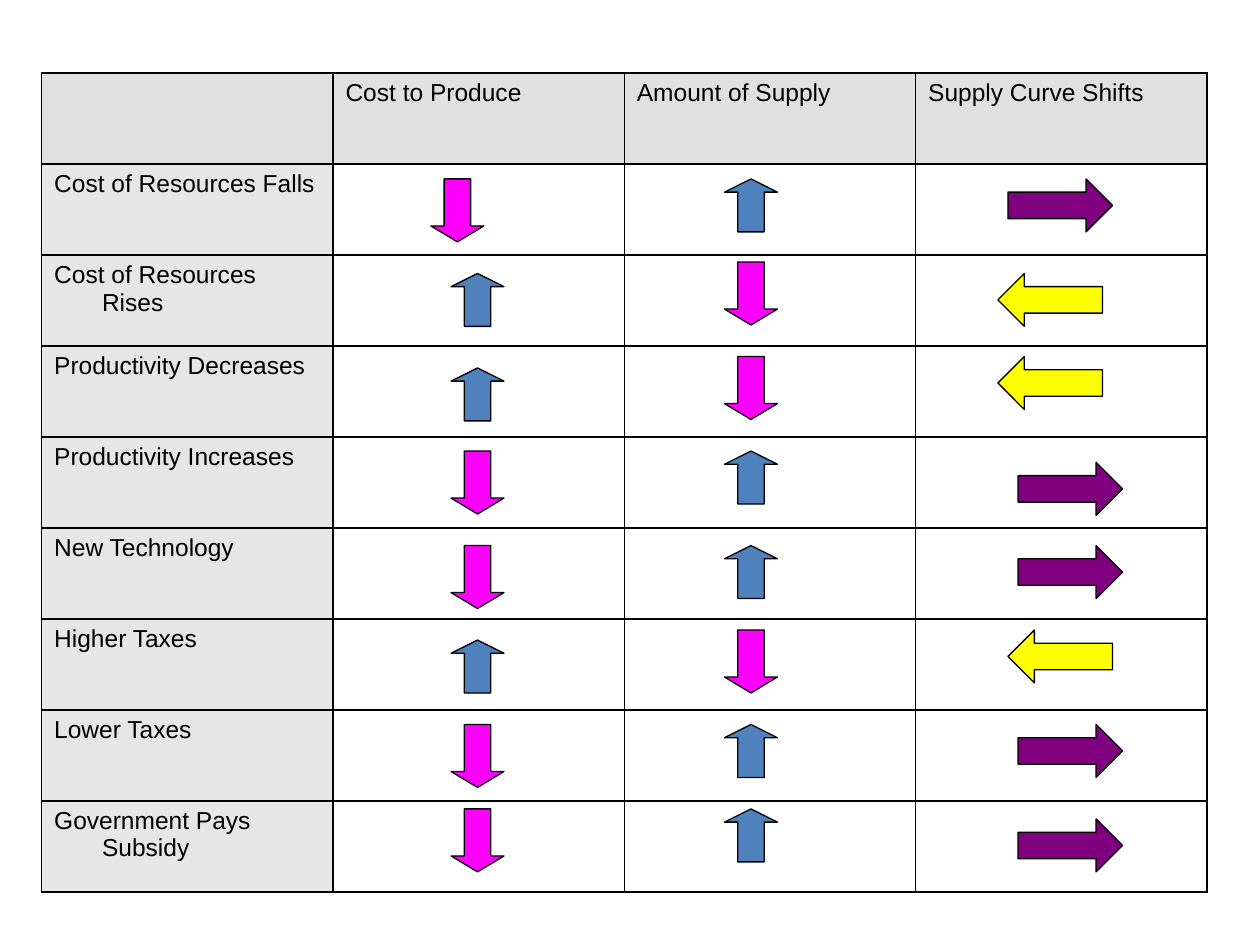
from dataclasses import dataclass

from lxml.etree import SubElement
from pptx import Presentation
from pptx.dml.color import RGBColor
from pptx.enum.shapes import MSO_SHAPE
from pptx.oxml.ns import qn
from pptx.util import Inches, Pt


@dataclass(frozen=True)
class Theme:
    """Colours, type and line sizes of the slide."""

    font: str = "Arial"
    text_size: float = 14
    ink: str = "000000"
    header_fill: str = "E0E0E0"
    label_fill: str = "E6E6E6"
    up_fill: str = "4F81BD"
    down_fill: str = "FF00FF"
    right_fill: str = "800080"
    left_fill: str = "FFFF00"
    border_width: float = 1
    outline_width: float = 0.75
    hanging_indent: float = 0.38


THEME = Theme()

ARROWS = {
    "up": (MSO_SHAPE.UP_ARROW, 0.42, 0.42, 0.25, THEME.up_fill),
    "down": (MSO_SHAPE.DOWN_ARROW, 0.42, 0.5, 0.3, THEME.down_fill),
    "right": (MSO_SHAPE.RIGHT_ARROW, 0.83, 0.42, 0.5, THEME.right_fill),
    "left": (MSO_SHAPE.LEFT_ARROW, 0.83, 0.42, 0.5, THEME.left_fill),
}

HEADERS = ("", "Cost to Produce", "Amount of Supply", "Supply Curve Shifts")

EFFECTS = (
    ("Cost of Resources Falls",
     ("down", 3.42, 1.42), ("up", 5.75, 1.42), ("right", 8, 1.42)),
    ("Cost of Resources Rises",
     ("up", 3.58, 2.17), ("down", 5.75, 2.08), ("left", 7.92, 2.17)),
    ("Productivity Decreases",
     ("up", 3.58, 2.92), ("down", 5.75, 2.83), ("left", 7.92, 2.83)),
    ("Productivity Increases",
     ("down", 3.58, 3.58), ("up", 5.75, 3.58), ("right", 8.08, 3.67)),
    ("New Technology",
     ("down", 3.58, 4.33), ("up", 5.75, 4.33), ("right", 8.08, 4.33)),
    ("Higher Taxes",
     ("up", 3.58, 5.08), ("down", 5.75, 5), ("left", 8, 5)),
    ("Lower Taxes",
     ("down", 3.58, 5.75), ("up", 5.75, 5.75), ("right", 8.08, 5.75)),
    ("Government Pays Subsidy",
     ("down", 3.58, 6.42), ("up", 5.75, 6.42), ("right", 8.08, 6.5)),
)


class SlideBuilder:
    """Adds styled elements to the current slide."""

    def __init__(self, slide, theme):
        """Keep the slide and its style."""
        self.slide = slide
        self.theme = theme

    def add_table(self, rows, left, top, width, height):
        """Add a bordered table with shaded headers and row labels."""
        table = self.slide.shapes.add_table(
            len(rows), len(rows[0]),
            Inches(left), Inches(top), Inches(width), Inches(height),
        ).table
        table.first_row = False
        table.horz_banding = False
        for row_index, row in enumerate(rows):
            for column_index, text in enumerate(row):
                cell = table.cell(row_index, column_index)
                self.add_borders(cell)
                if row_index == 0:
                    self.fill(cell, self.theme.header_fill)
                elif column_index == 0:
                    self.fill(cell, self.theme.label_fill)
                else:
                    cell.fill.background()
                if text:
                    self.add_text(cell, text)

    def add_borders(self, cell):
        """Draw a line on all four sides of a cell."""
        properties = cell._tc.get_or_add_tcPr()
        for side in ("a:lnL", "a:lnR", "a:lnT", "a:lnB"):
            line = SubElement(properties, qn(side), w=str(Pt(self.theme.border_width)))
            solid = SubElement(line, qn("a:solidFill"))
            SubElement(solid, qn("a:srgbClr"), val=self.theme.ink)

    def add_text(self, cell, text):
        """Write one run with a hanging indent into a cell."""
        paragraph = cell.text_frame.paragraphs[0]
        indent = Inches(self.theme.hanging_indent)
        properties = paragraph._p.get_or_add_pPr()
        properties.set("marL", str(indent))
        properties.set("indent", str(-indent))
        run = paragraph.add_run()
        run.text = text
        run.font.name = self.theme.font
        run.font.size = Pt(self.theme.text_size)
        run.font.color.rgb = RGBColor.from_string(self.theme.ink)

    def add_arrow(self, direction, left, top):
        """Add a block arrow pointing in the given direction."""
        preset, width, height, head, color = ARROWS[direction]
        shape = self.slide.shapes.add_shape(
            preset, Inches(left), Inches(top), Inches(width), Inches(height)
        )
        shape.adjustments[0] = 0.5
        shape.adjustments[1] = head
        shape.shadow.inherit = False
        self.fill(shape, color)
        shape.line.color.rgb = RGBColor.from_string(self.theme.ink)
        shape.line.width = Pt(self.theme.outline_width)

    def fill(self, target, color):
        """Give a cell or shape a solid fill."""
        target.fill.solid()
        target.fill.fore_color.rgb = RGBColor.from_string(color)


def main():
    """Build and save the presentation."""
    presentation = Presentation()
    presentation.slide_width = Inches(10)
    presentation.slide_height = Inches(7.5)
    slide = presentation.slides.add_slide(presentation.slide_layouts[6])
    builder = SlideBuilder(slide, THEME)
    rows = [HEADERS] + [(label, "", "", "") for label, *_ in EFFECTS]
    builder.add_table(rows, 0.33, 0.58, 9.25, 6.5)
    for _, *arrows in EFFECTS:
        for direction, left, top in arrows:
            builder.add_arrow(direction, left, top)
    presentation.save("out.pptx")


if __name__ == "__main__":
    main()
